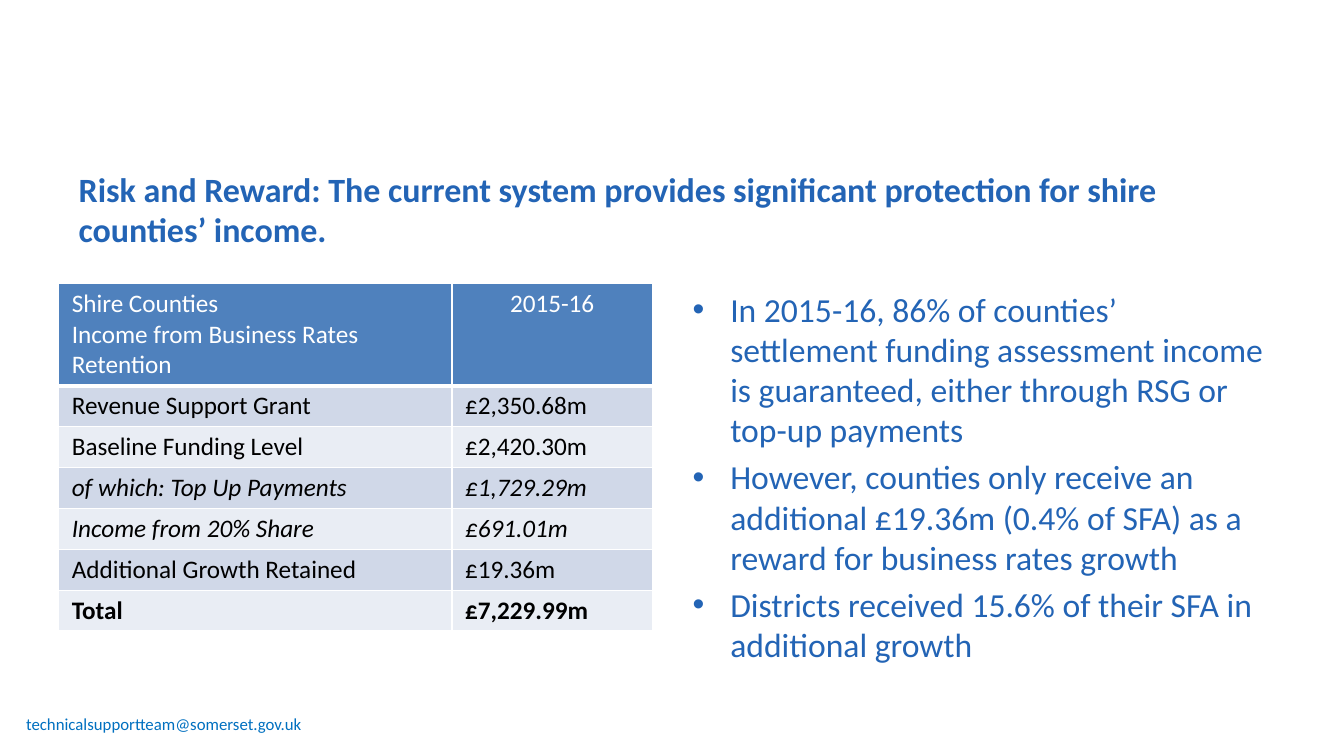
from dataclasses import dataclass

from lxml.etree import SubElement
from pptx import Presentation
from pptx.dml.color import RGBColor as Rgb
from pptx.enum.text import MSO_ANCHOR as Anchor, MSO_AUTO_SIZE as AutoSize, PP_ALIGN as Align
from pptx.oxml.ns import qn
from pptx.util import Cm, Pt


@dataclass(frozen=True)
class Theme:
    font: str = "Calibri"
    accent: str = "2364B5"
    contact: str = "0070C0"
    header: str = "4F81BD"
    bands: tuple = ("D0D8E8", "E9EDF4")
    light: str = "FFFFFF"
    dark: str = "000000"
    title_size: float = 24.3
    body_size: float = 24
    table_size: float = 18
    contact_size: float = 12


class SlideBuilder:
    def __init__(self, deck, theme):
        self.theme = theme
        self.slide = deck.slides.add_slide(deck.slide_layouts[1])

    def style(self, paragraph, size, color, bold=False, italic=False, align=Align.LEFT):
        paragraph.alignment = align
        font = paragraph.font
        font.name, font.size = self.theme.font, Pt(size)
        font.bold, font.italic = bold, italic
        font.color.rgb = Rgb.from_string(color)

    def place(self, shape, left, top, width, height, anchor=Anchor.TOP):
        shape.left, shape.top = Cm(left), Cm(top)
        shape.width, shape.height = Cm(width), Cm(height)
        frame = shape.text_frame
        frame.word_wrap, frame.auto_size = True, AutoSize.NONE
        frame.vertical_anchor = anchor
        return frame

    def title(self, text, *box):
        frame = self.place(self.slide.shapes.title, *box)
        frame.text = text
        self.style(frame.paragraphs[0], self.theme.title_size, self.theme.accent, bold=True)

    def bullets(self, points, *box):
        frame = self.place(self.slide.placeholders[1], *box)
        frame.text = "\n".join(points)
        for index, paragraph in enumerate(frame.paragraphs):
            props = paragraph._p.get_or_add_pPr()
            props.set("marL", str(Cm(0.95)))
            props.set("indent", str(-Cm(0.95)))
            bullet_color = SubElement(props, qn("a:buClr"))
            SubElement(bullet_color, qn("a:srgbClr"), val=self.theme.accent)
            SubElement(props, qn("a:buFont"), typeface="Arial")
            SubElement(props, qn("a:buChar"), char="•")
            paragraph.space_before = Pt(4.8 if index else 0)
            self.style(paragraph, self.theme.body_size, self.theme.accent)

    def contact(self, text, *box):
        label = self.slide.shapes.add_textbox(0, 0, 0, 0)
        frame = self.place(label, *box, anchor=Anchor.MIDDLE)
        frame.text = text
        self.style(frame.paragraphs[0], self.theme.contact_size, self.theme.contact)

    def borders(self, cell, bottom):
        props = cell._tc.get_or_add_tcPr()
        for position, (side, width) in enumerate(zip("LRTB", (1, 1, 1, bottom))):
            line = props.makeelement(qn(f"a:ln{side}"), {"w": str(Pt(width))})
            fill = SubElement(line, qn("a:solidFill"))
            SubElement(fill, qn("a:srgbClr"), val=self.theme.light)
            props.insert(position, line)

    def cell(self, cell, text, fill, bottom, **look):
        cell.text = text
        cell.margin_left = cell.margin_right = Cm(0.33)
        cell.fill.solid()
        cell.fill.fore_color.rgb = Rgb.from_string(fill)
        self.borders(cell, bottom)
        for paragraph in cell.text_frame.paragraphs:
            self.style(paragraph, self.theme.table_size, **look)

    def table(self, header, rows, left, top, widths, header_height, row_height):
        height = header_height + row_height * len(rows)
        table = self.slide.shapes.add_table(
            len(rows) + 1, len(widths), Cm(left), Cm(top), Cm(sum(widths)), Cm(height)
        ).table
        for column, width in zip(table.columns, widths):
            column.width = Cm(width)
        for index, row in enumerate(table.rows):
            row.height = Cm(row_height if index else header_height)
        for column, (text, align) in enumerate(header):
            self.cell(table.cell(0, column), text, self.theme.header, 3,
                      color=self.theme.light, align=align)
        for index, (*texts, emphasis) in enumerate(rows):
            for column, text in enumerate(texts):
                self.cell(table.cell(index + 1, column), text, self.theme.bands[index % 2], 1,
                          color=self.theme.dark, bold=emphasis == "bold",
                          italic=emphasis == "italic")


def main():
    deck = Presentation()
    deck.slide_width, deck.slide_height = Cm(33.87), Cm(19.05)
    page = SlideBuilder(deck, Theme())
    page.contact("technicalsupportteam@somerset.gov.uk", 0.41, 17.73, 10.72, 1.02)
    page.title(
        "Risk and Reward: The current system provides significant protection "
        "for shire counties’ income.", 1.73, 4.11, 30.48, 3.18)
    header = [("Shire Counties\nIncome from Business Rates Retention", Align.LEFT),
              ("2015-16", Align.CENTER)]
    income = [
        ("Revenue Support Grant", "£2,350.68m", "plain"),
        ("Baseline Funding Level", "£2,420.30m", "plain"),
        ("of which: Top Up Payments", "£1,729.29m", "italic"),
        ("Income from 20% Share", "£691.01m", "italic"),
        ("Additional Growth Retained", "£19.36m", "plain"),
        ("Total", "£7,229.99m", "bold"),
    ]
    page.table(header, income, 1.48, 7.14, (9.91, 5.05), 2.58, 1.03)
    page.bullets([
        "In 2015-16, 86% of counties’ settlement funding assessment income is guaranteed, "
        "either through RSG or top-up payments",
        "However, counties only receive an additional £19.36m (0.4% of SFA) as a reward "
        "for business rates growth",
        "Districts received 15.6% of their SFA in additional growth",
    ], 17.2, 7.14, 14.96, 9.88)
    deck.save("out.pptx")


if __name__ == "__main__":
    main()
